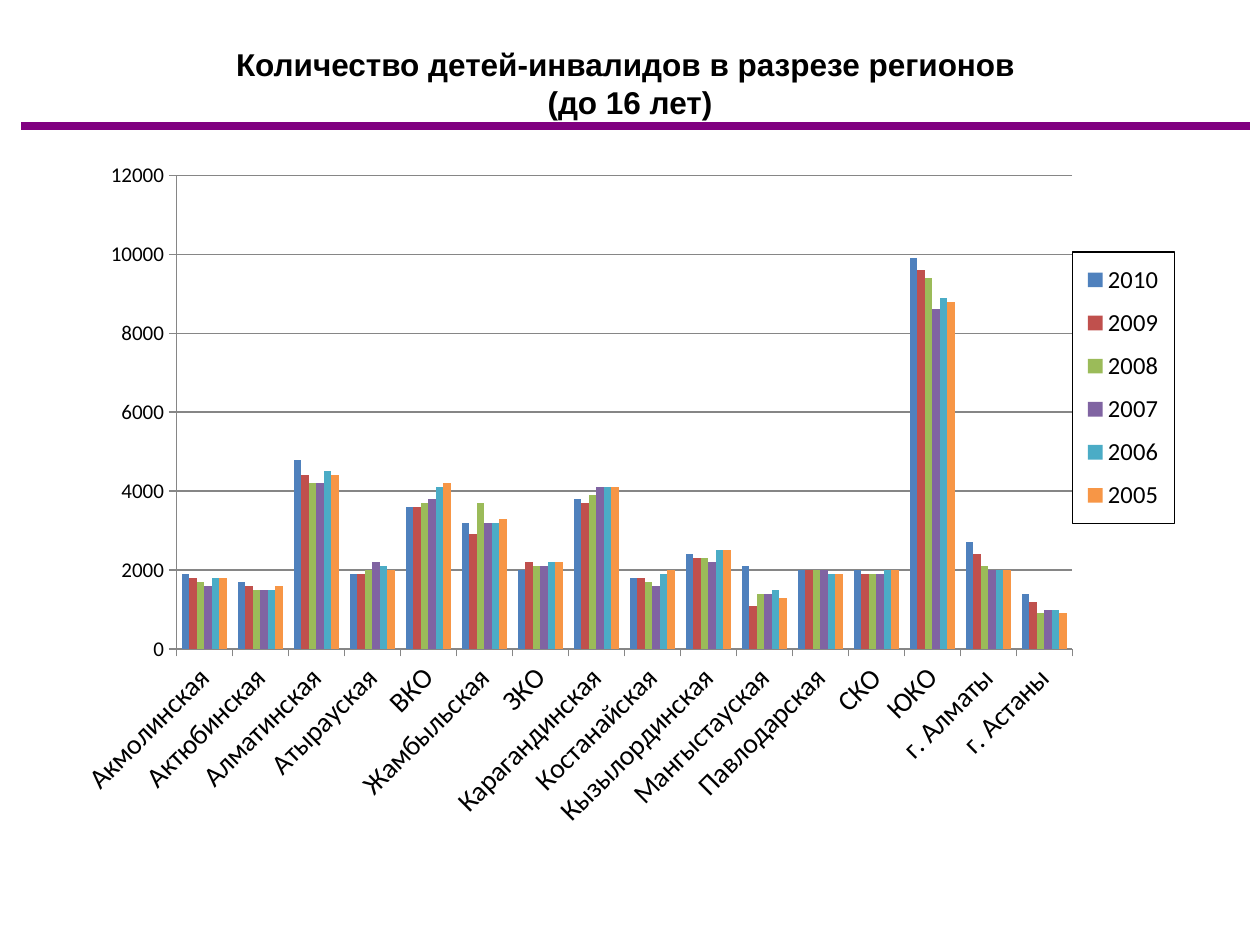
"""Build a slide with a column chart of disabled children by region, 2005 to 2010."""
from lxml.etree import SubElement
from pptx import Presentation
from pptx.chart.data import CategoryChartData
from pptx.dml.color import RGBColor
from pptx.enum.chart import XL_CHART_TYPE, XL_LEGEND_POSITION, XL_TICK_MARK
from pptx.enum.shapes import MSO_CONNECTOR
from pptx.enum.text import MSO_ANCHOR, PP_ALIGN
from pptx.oxml import parse_xml
from pptx.oxml.ns import nsdecls, qn
from pptx.util import Inches, Pt

COLORS = {
    "text": "000000", "rule": "800080", "grid": "868686",
    "2010": "4F81BD", "2009": "C0504D", "2008": "9BBB59",
    "2007": "8064A2", "2006": "4BACC6", "2005": "F79646",
}
REGIONS = [
    "Акмолинская", "Актюбинская", "Алматинская", "Атырауская", "ВКО", "Жамбыльская",
    "ЗКО", "Карагандинская", "Костанайская", "Кызылординская", "Мангыстауская",
    "Павлодарская", "СКО", "ЮКО", "г. Алматы", "г. Астаны",
]
CHILDREN = {
    "2010": [1900, 1700, 4800, 1900, 3600, 3200, 2000, 3800, 1800, 2400, 2100, 2000, 2000, 9900, 2700, 1400],
    "2009": [1800, 1600, 4400, 1900, 3600, 2900, 2200, 3700, 1800, 2300, 1100, 2000, 1900, 9600, 2400, 1200],
    "2008": [1700, 1500, 4200, 2000, 3700, 3700, 2100, 3900, 1700, 2300, 1400, 2000, 1900, 9400, 2100, 900],
    "2007": [1600, 1500, 4200, 2200, 3800, 3200, 2100, 4100, 1600, 2200, 1400, 2000, 1900, 8600, 2000, 1000],
    "2006": [1800, 1500, 4500, 2100, 4100, 3200, 2200, 4100, 1900, 2500, 1500, 1900, 2000, 8900, 2000, 1000],
    "2005": [1800, 1600, 4400, 2000, 4200, 3300, 2200, 4100, 2000, 2500, 1300, 1900, 2000, 8800, 2000, 900],
}


def format_font(font, size, name="Calibri", bold=False):
    font.size, font.name, font.bold = Pt(size), name, bold
    font.color.rgb = RGBColor.from_string(COLORS["text"])


def manual_layout(x, y, w, h, inner=False):
    target = '<c:layoutTarget val="inner"/>' if inner else ""
    sizes = "".join(f'<c:{key} val="{value}"/>' for key, value in zip("xywh", (x, y, w, h)))
    return parse_xml(
        f'<c:layout {nsdecls("c")}><c:manualLayout>{target}<c:xMode val="edge"/>'
        f'<c:yMode val="edge"/>{sizes}</c:manualLayout></c:layout>')


deck = Presentation()
deck.slide_width, deck.slide_height = Inches(10), Inches(7.5)
page = deck.slides.add_slide(deck.slide_layouts[5])

title = page.shapes.title
title.left, title.top, title.width, title.height = Inches(0.5), Inches(0.23), Inches(9), Inches(0.86)
title.text_frame.text = "Количество детей-инвалидов в разрезе регионов \v(до 16 лет)"
title.text_frame.vertical_anchor = MSO_ANCHOR.MIDDLE
para = title.text_frame.paragraphs[0]
para.alignment = PP_ALIGN.CENTER
for span in para.runs:
    format_font(span.font, 18, "Arial", bold=True)

data = CategoryChartData()
data.categories = REGIONS
for year, values in CHILDREN.items():
    data.add_series(year, values)
chart = page.shapes.add_chart(
    XL_CHART_TYPE.COLUMN_CLUSTERED, Inches(0.5), Inches(1.17), Inches(9), Inches(5.53), data).chart
format_font(chart.font, 10)
chart.has_title = False

plot = chart.plots[0]
plot.gap_width, plot.overlap, plot.vary_by_categories = 150, 0, False
for series in plot.series:
    series.format.fill.solid()
    series.format.fill.fore_color.rgb = RGBColor.from_string(COLORS[series.name])

plot_area = chart.element.find(".//" + qn("c:plotArea"))
for layout in plot_area.findall(qn("c:layout")):
    plot_area.remove(layout)
plot_area.insert(0, manual_layout(0.1, 0.04, 0.79, 0.68, inner=True))

for axis, size in ((chart.category_axis, 16), (chart.value_axis, 12)):
    format_font(axis.tick_labels.font, size)
    axis.major_tick_mark = XL_TICK_MARK.OUTSIDE
    axis.minor_tick_mark = XL_TICK_MARK.NONE
    axis.format.line.color.rgb = RGBColor.from_string(COLORS["grid"])
    axis.format.line.width = Pt(0.75)
label_body = chart.element.find(".//" + qn("c:catAx")).find(qn("c:txPr")).find(qn("a:bodyPr"))
label_body.set("rot", "-2700000")
label_body.set("vert", "horz")

value_axis = chart.value_axis
value_axis.minimum_scale, value_axis.maximum_scale, value_axis.major_unit = 0, 12000, 2000
value_axis.has_major_gridlines = True
value_axis.major_gridlines.format.line.color.rgb = RGBColor.from_string(COLORS["grid"])
value_axis.major_gridlines.format.line.width = Pt(0.75)
value_axis.tick_labels.number_format = "0"
value_axis.tick_labels.number_format_is_linked = False

chart.has_legend = True
legend = chart.legend
legend.position = XL_LEGEND_POSITION.RIGHT
legend.include_in_layout = False
format_font(legend.font, 14)
legend_node = chart.element.find(".//" + qn("c:legend"))
for layout in legend_node.findall(qn("c:layout")):
    legend_node.remove(layout)
overlay = legend_node.find(qn("c:overlay"))
overlay.addprevious(manual_layout(0.89, 0.15, 0.09, 0.39))
overlay.addnext(parse_xml(
    f'<c:spPr {nsdecls("c", "a")}><a:noFill/><a:ln w="9525"><a:solidFill>'
    f'<a:srgbClr val="{COLORS["text"]}"/></a:solidFill></a:ln></c:spPr>'))

rule = page.shapes.add_connector(MSO_CONNECTOR.STRAIGHT, Inches(0.17), Inches(1), Inches(9.92), Inches(1))
rule.line.color.rgb = RGBColor.from_string(COLORS["rule"])
rule.line.width = Pt(4.5)
SubElement(rule.element.spPr, qn("a:effectLst"))

deck.save("out.pptx")
